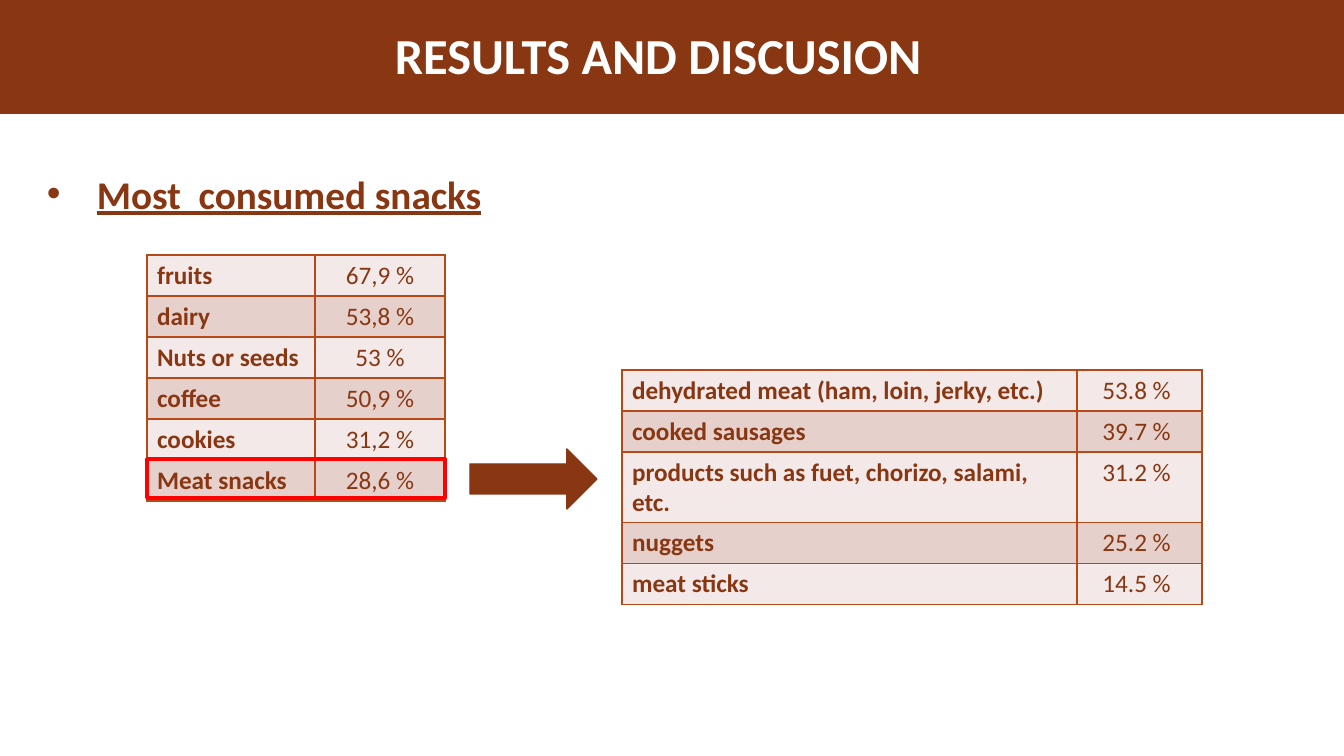
from dataclasses import dataclass

from lxml.etree import SubElement
from pptx import Presentation
from pptx.dml.color import RGBColor
from pptx.enum.shapes import MSO_SHAPE
from pptx.enum.text import PP_ALIGN
from pptx.oxml.ns import qn
from pptx.util import Emu, Pt


@dataclass(frozen=True)
class Theme:
    font: str = "Calibri"
    brown: str = "893713"
    white: str = "FFFFFF"
    border: str = "B74919"
    highlight: str = "FF0000"
    bands: tuple = ("F3E9E8", "E6D0CC")
    title_size: int = 36
    heading_size: int = 28
    cell_size: int = 18


THEME = Theme()
PX_PER_INCH = 100.8
ROW_HEIGHT = 41

SNACKS = [
    ("fruits", "67,9 %"),
    ("dairy", "53,8 %"),
    ("Nuts or seeds", "53 %"),
    ("coffee", "50,9 %"),
    ("cookies", "31,2 %"),
    ("Meat snacks", "28,6 %"),
]
MEAT_SNACKS = [
    ("dehydrated meat (ham, loin, jerky, etc.)", "53.8 % "),
    ("cooked sausages", "39.7 % "),
    ("products such as fuet, chorizo, salami, etc.", "31.2 % "),
    ("nuggets", "25.2 % "),
    ("meat sticks", "14.5 % "),
]


def px(length):
    return Emu(round(length * 914400 / PX_PER_INCH))


def rgb(color):
    return RGBColor.from_string(color)


def add_run(paragraph, text, size, color, bold=True, underline=None):
    run = paragraph.add_run()
    run.text = text
    font = run.font
    font.name, font.size = THEME.font, Pt(size)
    font.bold, font.underline = bold, underline
    font.color.rgb = rgb(color)


def add_outlined_shape(slide, preset, box, line_color, line_width=1, fill=None):
    shape = slide.shapes.add_shape(preset, *map(px, box))
    shape.shadow.inherit = False
    shape.line.color.rgb = rgb(line_color)
    shape.line.width = Pt(line_width)
    if fill:
        shape.fill.solid()
        shape.fill.fore_color.rgb = rgb(fill)
    else:
        shape.fill.background()


def add_title_band(slide, box):
    left, top, width, height = box
    add_outlined_shape(slide, MSO_SHAPE.RECTANGLE, box, THEME.brown, fill=THEME.brown)
    title = slide.shapes.add_textbox(px(left + 385), px(top + 21), px(552), px(72))
    title.text_frame.word_wrap = False
    add_run(title.text_frame.paragraphs[0], "RESULTS AND DISCUSION",
            THEME.title_size, THEME.white)


def add_bullet_heading(slide, box, text):
    heading = slide.shapes.add_textbox(*map(px, box))
    heading.fill.solid()
    heading.fill.fore_color.rgb = rgb(THEME.white)
    heading.text_frame.word_wrap = True
    paragraph = heading.text_frame.paragraphs[0]
    paragraph.alignment = PP_ALIGN.JUSTIFY
    properties = paragraph._p.get_or_add_pPr()
    indent = px(50)
    properties.set("marL", str(indent))
    properties.set("indent", str(-indent))
    SubElement(properties, qn("a:buFont"), typeface="Arial")
    SubElement(properties, qn("a:buChar"), char="•")
    add_run(paragraph, text, THEME.heading_size, THEME.brown, underline=True)


def style_cell(cell, fill):
    """Draw the four borders, then the fill, in the order the schema asks for."""
    properties = cell._tc.get_or_add_tcPr()
    for side in ("a:lnL", "a:lnR", "a:lnT", "a:lnB"):
        line = SubElement(properties, qn(side), w=str(Pt(1)))
        solid = SubElement(line, qn("a:solidFill"))
        SubElement(solid, qn("a:srgbClr"), val=THEME.border)
    cell.fill.solid()
    cell.fill.fore_color.rgb = rgb(fill)


def add_share_table(slide, left, top, column_widths, entries):
    """Add a banded table of names and their shares."""
    frame = slide.shapes.add_table(
        len(entries), len(column_widths), px(left), px(top),
        px(sum(column_widths)), px(ROW_HEIGHT * len(entries)))
    table = frame.table
    table.first_row = table.horz_banding = False
    for column, width in zip(table.columns, column_widths):
        column.width = px(width)
    for row_index, entry in enumerate(entries):
        table.rows[row_index].height = px(ROW_HEIGHT)
        for column_index, text in enumerate(entry):
            is_name = column_index == 0
            cell = table.cell(row_index, column_index)
            style_cell(cell, THEME.bands[row_index % 2])
            paragraph = cell.text_frame.paragraphs[0]
            paragraph.alignment = PP_ALIGN.LEFT if is_name else PP_ALIGN.CENTER
            add_run(paragraph, text, THEME.cell_size, THEME.brown, bold=is_name)


def add_snack_ranking(slide, left, top):
    """Add the snack table with its last row framed."""
    column_widths = (168, 130)
    add_share_table(slide, left, top, column_widths, SNACKS)
    last_row = (left, top + ROW_HEIGHT * (len(SNACKS) - 1) - 1, sum(column_widths), 39)
    add_outlined_shape(slide, MSO_SHAPE.RECTANGLE, last_row, THEME.highlight, 2.5)


def main():
    presentation = Presentation()
    presentation.slide_width, presentation.slide_height = px(1344), px(756)
    slide = presentation.slides.add_slide(presentation.slide_layouts[6])
    add_title_band(slide, (0, -2, 1344, 115))
    add_bullet_heading(slide, (37, 165, 1202, 105), "Most  consumed snacks")
    add_snack_ranking(slide, 147, 255)
    add_share_table(slide, 622, 370, (455, 125), MEAT_SNACKS)
    add_outlined_shape(slide, MSO_SHAPE.RIGHT_ARROW, (470, 449, 127, 60),
                       THEME.brown, fill=THEME.brown)
    presentation.save("out.pptx")


if __name__ == "__main__":
    main()
